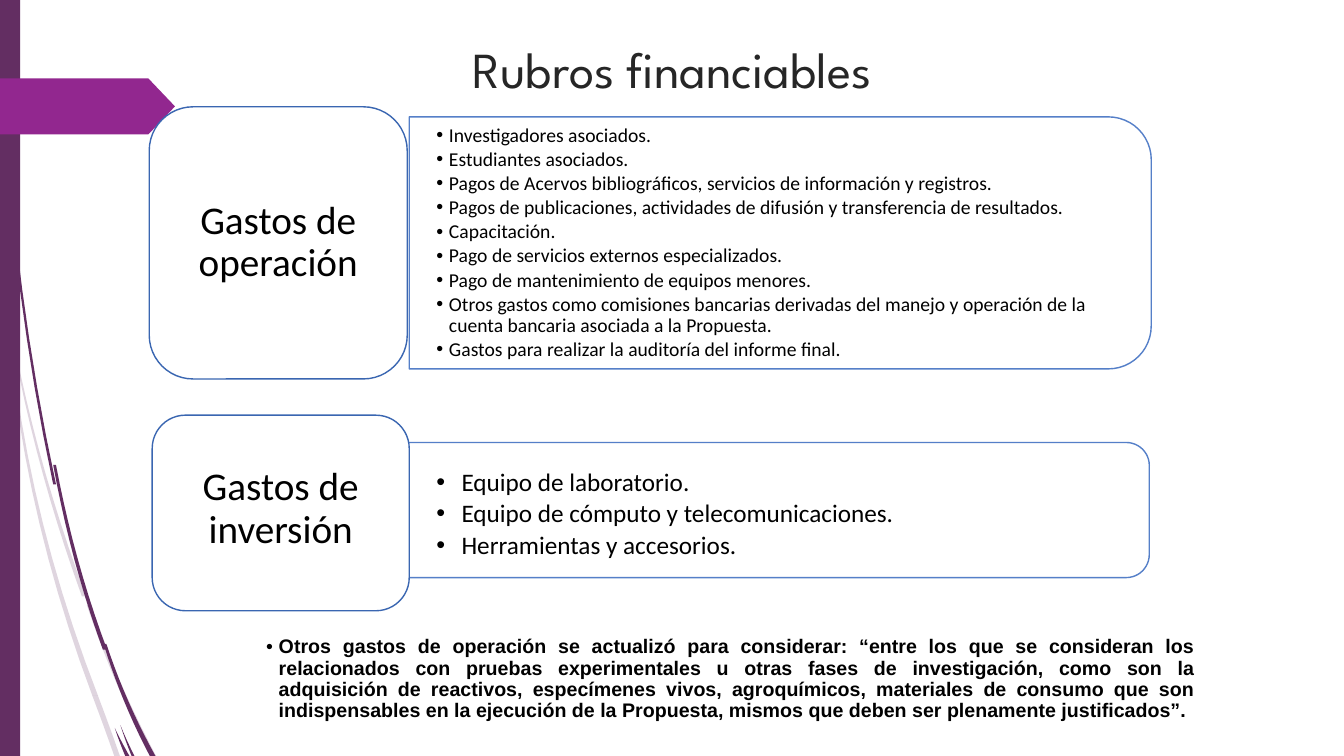
from dataclasses import dataclass

from lxml import etree
from pptx import Presentation
from pptx.dml import color
from pptx.enum import shapes as kinds, text as txt
from pptx.oxml import ns
from pptx.util import Pt


@dataclass(frozen=True)
class Theme:
    plum: str = "632E62"
    violet: str = "92278F"
    white: str = "FFFFFF"
    ink: str = "000000"
    title_ink: str = "262626"
    panel_edge: str = "4372C3"
    card_edge: str = "3A66B1"
    title_font: str = "League Spartan"
    main_font: str = "Calibri"
    note_font: str = "Arial"
    title_size: float = 36
    card_size: float = 28
    large_size: float = 18
    small_size: float = 14
    line_spacing: float = 0.9


@dataclass(frozen=True)
class Box:
    left: float
    top: float
    width: float
    height: float


@dataclass(frozen=True)
class Wisp:
    start: tuple[float, float]
    bend: tuple[float, float]
    end: tuple[float, float]
    start_width: float
    end_width: float
    opacity: int = 100


@dataclass(frozen=True)
class BulletList:
    box: Box
    items: tuple[str, ...]
    size: float
    indent: float
    gap: float
    insets: tuple[float, float, float, float]
    font: str
    bold: bool = False
    first_gap: float = 0
    align: txt.PP_ALIGN = txt.PP_ALIGN.LEFT
    anchor: txt.MSO_ANCHOR = txt.MSO_ANCHOR.MIDDLE


@dataclass(frozen=True)
class ExpenseGroup:
    heading: str
    card: Box
    panel: Box
    lift: float
    placeholder: int
    bullets: BulletList


THEME = Theme()
CURVE_STEPS = 10
WISPS = (
    Wisp((11, 252), (28, 339), (60, 426), 1, 3, 20),
    Wisp((63, 432), (82, 487), (110, 541), 2, 4, 20),
    Wisp((8, 252), (21, 374), (68, 497), 1, 4, 20),
    Wisp((68, 497), (76, 518), (84, 541), 4, 4, 20),
    Wisp((1, 0), (2, 173), (39, 346), 1, 2),
    Wisp((39, 332), (52, 402), (75, 464), 2, 3),
    Wisp((75, 460), (88, 501), (109, 540), 2, 4),
    Wisp((86, 518), (90, 529), (95, 540), 0, 2),
    Wisp((82, 520), (86, 530), (91, 540), 0, 3),
)
PAGE_ARROW = ((0, 56), (106, 56), (125, 76), (106, 96), (0, 96))

GROUPS = (
    ExpenseGroup(
        "Gastos de operación", Box(106.6, 76.3, 184.3, 194.4), Box(292.3, 83.5, 530, 180), 0, 2,
        BulletList(Box(292.3, 92.2, 521.3, 162.7), (
            "Investigadores asociados.",
            "Estudiantes asociados.",
            "Pagos de Acervos bibliográficos, servicios de información y registros.",
            "Pagos de publicaciones, actividades de difusión y transferencia de resultados.",
            "Capacitación.",
            "Pago de servicios externos especializados.",
            "Pago de mantenimiento de equipos menores.",
            "Otros gastos como comisiones bancarias derivadas del manejo y operación de la "
            "cuenta bancaria asociada a la Propuesta.",
            "Gastos para realizar la auditoría del informe final.",
        ), THEME.small_size, 9, 2.1, (19.4, 10, 19.4, 10), THEME.main_font)),
    ExpenseGroup(
        "Gastos de inversión", Box(108.7, 296.6, 183.6, 139.7), Box(290.9, 316.1, 530, 96.5), 5, 4,
        BulletList(Box(292.3, 307.4, 522.7, 140.4), (
            "Equipo de laboratorio.",
            "Equipo de cómputo y telecomunicaciones.",
            "Herramientas y accesorios.",
        ), THEME.large_size, 18, 3, (19.4, 10, 19.4, 30), THEME.main_font)),
)
NOTE = BulletList(Box(182.9, 451.4, 678.2, 68.4), (
    "Otros gastos de operación se actualizó para considerar: “entre los que se consideran los "
    "relacionados con pruebas experimentales u otras fases de investigación, como son la "
    "adquisición de reactivos, especímenes vivos, agroquímicos, materiales de consumo que son "
    "indispensables en la ejecución de la Propuesta, mismos que deben ser plenamente justificados”.",
), THEME.small_size, 9, 2.1, (7.2, 3.6, 7.2, 3.6), THEME.note_font, True, 2.1,
    txt.PP_ALIGN.JUSTIFY, txt.MSO_ANCHOR.TOP)


def rgb(code: str) -> color.RGBColor:
    return color.RGBColor.from_string(code)


def lengths(box: Box) -> tuple[Pt, ...]:
    return Pt(box.left), Pt(box.top), Pt(box.width), Pt(box.height)


def paint(shape, fill: str, edge: str | None = None, opacity: int = 100) -> None:
    shape.shadow.inherit = False
    shape.fill.solid()
    shape.fill.fore_color.rgb = rgb(fill)
    if edge:
        shape.line.color.rgb = rgb(edge)
        shape.line.width = Pt(1)
    else:
        shape.line.fill.background()
    if opacity < 100:
        for tint in shape.element.iter(ns.qn("a:srgbClr")):
            etree.SubElement(tint, ns.qn("a:alpha"), val=str(opacity * 1000))


def wisp_outline(wisp: Wisp) -> list[tuple[float, float]]:
    near, far = [], []
    for step in range(CURVE_STEPS + 1):
        t = step / CURVE_STEPS
        s = 1 - t
        x, y = (s * s * a + 2 * s * t * b + t * t * c
                for a, b, c in zip(wisp.start, wisp.bend, wisp.end))
        half = (s * wisp.start_width + t * wisp.end_width) / 2
        near.append((x - half, y))
        far.append((x + half, y))
    return near + far[::-1]


def draw_outline(shapes, points, fill: str, opacity: int = 100) -> None:
    first, *rest = [(Pt(x), Pt(y)) for x, y in points]
    builder = shapes.build_freeform(*first)
    builder.add_line_segments(rest, close=True)
    paint(builder.convert_to_shape(), fill, opacity=opacity)


def set_frame(frame, insets: tuple[float, ...], anchor: txt.MSO_ANCHOR) -> None:
    frame.word_wrap = True
    frame.auto_size = txt.MSO_AUTO_SIZE.NONE
    frame.vertical_anchor = anchor
    frame.margin_left, frame.margin_top, frame.margin_right, frame.margin_bottom = map(Pt, insets)


def write(paragraph, words: str, font: str, size: float, ink: str, align: txt.PP_ALIGN,
          bold: bool = False, gap: float = 0) -> None:
    paragraph.alignment = align
    paragraph.line_spacing = THEME.line_spacing
    paragraph.space_before = Pt(gap)
    paragraph.space_after = Pt(0)
    run = paragraph.add_run()
    run.text = words
    run.font.name, run.font.size, run.font.bold = font, Pt(size), bold
    run.font.color.rgb = rgb(ink)


def add_bullet(paragraph, indent: float) -> None:
    props = paragraph._p.get_or_add_pPr()
    props.set("marL", str(Pt(indent)))
    props.set("indent", str(-Pt(indent)))
    tint = etree.SubElement(props, ns.qn("a:buClr"))
    etree.SubElement(tint, ns.qn("a:srgbClr"), val=THEME.ink)
    etree.SubElement(props, ns.qn("a:buFont"), typeface=THEME.note_font)
    etree.SubElement(props, ns.qn("a:buChar"), char="•")


def place(holder, box: Box) -> None:
    holder.left, holder.top, holder.width, holder.height = lengths(box)
    holder.element.getparent().append(holder.element)


def fill_list(holder, bullets: BulletList) -> None:
    place(holder, bullets.box)
    frame = holder.text_frame
    set_frame(frame, bullets.insets, bullets.anchor)
    for i, item in enumerate(bullets.items):
        paragraph = frame.add_paragraph() if i else frame.paragraphs[0]
        paragraph.level = 1
        write(paragraph, item, bullets.font, bullets.size, THEME.ink, bullets.align,
              bullets.bold, bullets.gap if i else bullets.first_gap)
        add_bullet(paragraph, bullets.indent)


def draw_group(slide, group: ExpenseGroup) -> None:
    area = group.panel
    upright = Box(area.left + (area.width - area.height) / 2,
                  area.top + (area.height - area.width) / 2, area.height, area.width)
    panel = slide.shapes.add_shape(kinds.MSO_SHAPE.ROUND_2_SAME_RECTANGLE, *lengths(upright))
    panel.rotation = 90
    panel.adjustments[0] = 0.17
    paint(panel, THEME.white, THEME.panel_edge, 90)
    fill_list(slide.placeholders[group.placeholder], group.bullets)
    card = slide.shapes.add_shape(kinds.MSO_SHAPE.ROUNDED_RECTANGLE, *lengths(group.card))
    card.adjustments[0] = 0.17
    paint(card, THEME.white, THEME.card_edge)
    set_frame(card.text_frame, (10, 5, 10, 5 + group.lift), txt.MSO_ANCHOR.MIDDLE)
    write(card.text_frame.paragraphs[0], group.heading, THEME.main_font, THEME.card_size,
          THEME.ink, txt.PP_ALIGN.CENTER)


def main() -> None:
    deck = Presentation()
    deck.slide_width, deck.slide_height = Pt(960), Pt(540)
    slide = deck.slides.add_slide(deck.slide_layouts.get_by_name("Comparison"))
    unused = slide.placeholders[3].element
    unused.getparent().remove(unused)
    for wisp in WISPS:
        draw_outline(slide.shapes, wisp_outline(wisp), THEME.plum, wisp.opacity)
    side_bar = slide.shapes.add_shape(kinds.MSO_SHAPE.RECTANGLE, *lengths(Box(0, 0, 14.4, 540)))
    paint(side_bar, THEME.plum)
    draw_outline(slide.shapes, PAGE_ARROW, THEME.violet)
    title = slide.shapes.title
    place(title, Box(66.2, 28.8, 828, 49.7))
    set_frame(title.text_frame, (7.2, 3.6, 7.2, 3.6), txt.MSO_ANCHOR.TOP)
    write(title.text_frame.paragraphs[0], "Rubros financiables", THEME.title_font,
          THEME.title_size, THEME.title_ink, txt.PP_ALIGN.CENTER)
    for group in GROUPS:
        draw_group(slide, group)
    fill_list(slide.placeholders[1], NOTE)
    deck.save("out.pptx")


if __name__ == "__main__":
    main()
